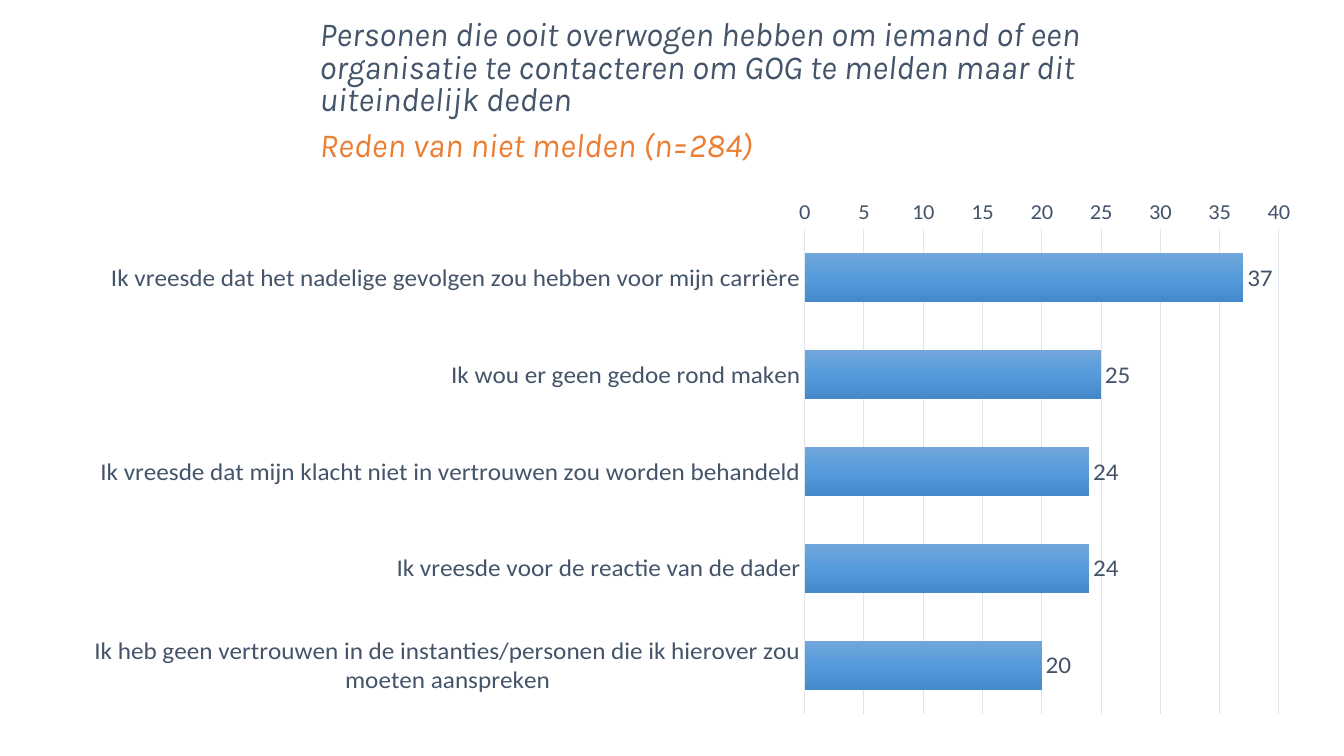
from pptx import Presentation
from pptx.chart.data import CategoryChartData
from pptx.dml.color import RGBColor
from pptx.enum.chart import XL_AXIS_CROSSES as Crosses, XL_CHART_TYPE as ChartType
from pptx.enum.chart import XL_LABEL_POSITION as LabelPosition, XL_TICK_MARK as TickMark
from pptx.enum.text import MSO_ANCHOR as Anchor, MSO_AUTO_SIZE as AutoSize
from pptx.oxml import parse_xml
from pptx.oxml.ns import nsdecls, qn
from pptx.util import Inches, Pt

COLORS = {
    "text": "44546A",
    "accent": "ED7D31",
    "grid": "E0E5EB",
    "bar_top": "71A6DB",
    "bar_middle": "559BDB",
    "bar_bottom": "448ACA",
}

HEADING = [
    ("Personen die ooit overwogen hebben om iemand of een organisatie te "
     "contacteren om GOG te melden maar dit uiteindelijk deden", "text"),
    ("Reden van niet melden (n=284)", "accent"),
]

REASONS = {
    "Ik vreesde dat het nadelige gevolgen zou hebben voor mijn carrière": 37,
    "Ik wou er geen gedoe rond maken": 25,
    "Ik vreesde dat mijn klacht niet in vertrouwen zou worden behandeld": 24,
    "Ik vreesde voor de reactie van de dader": 24,
    "Ik heb geen vertrouwen in de instanties/personen die ik hierover zou "
    "moeten aanspreken": 20,
}


def rgb(name):
    return RGBColor.from_string(COLORS[name])


def format_font(font, size, color="text", name="Calibri", italic=False):
    font.size = Pt(size)
    font.name = name
    font.italic = italic
    font.color.rgb = rgb(color)


def add_text(para, text, **style):
    span = para.add_run()
    span.text = text
    format_font(span.font, **style)


class ReasonsSlide:
    def __init__(self, deck):
        self.page = deck.slides.add_slide(deck.slide_layouts[1])
        title = self.page.shapes.title
        title.element.getparent().remove(title.element)

    def add_heading(self, left, top, width, height, lines):
        box = self.page.placeholders[1]
        box.left, box.top = Inches(left), Inches(top)
        box.width, box.height = Inches(width), Inches(height)
        frame = box.text_frame
        frame.word_wrap = True
        frame.auto_size = AutoSize.NONE
        frame.vertical_anchor = Anchor.BOTTOM
        for index, (text, color) in enumerate(lines):
            para = frame.paragraphs[0] if index == 0 else frame.add_paragraph()
            # No bullet and no hanging indent
            properties = para._p.get_or_add_pPr()
            properties.set("marL", "0")
            properties.set("indent", "0")
            properties.append(parse_xml(f'<a:buNone {nsdecls("a")}/>'))
            para.line_spacing = 0.8
            para.space_before = Pt(10 if index else 0)
            add_text(para, text, size=24, color=color, name="Karla", italic=True)

    def add_bar_chart(self, left, top, width, height, values):
        data = CategoryChartData(number_format="0")
        data.categories = list(values)
        data.add_series("Series 1", list(values.values()))
        chart = self.page.shapes.add_chart(
            ChartType.BAR_CLUSTERED, Inches(left), Inches(top),
            Inches(width), Inches(height), data).chart
        format_font(chart.font, size=13)
        chart.has_title = False
        chart.has_legend = False
        self.format_axes(chart)
        self.format_bars(chart.plots[0])
        self.place_plot(chart, x=0.569, y=0.002, w=0.379, h=0.922)

    def format_axes(self, chart):
        for axis, size in ((chart.category_axis, 18), (chart.value_axis, 16)):
            axis.major_tick_mark = axis.minor_tick_mark = TickMark.NONE
            format_font(axis.tick_labels.font, size=size)
        # First reason on top, scale along the bottom
        reasons, scale = chart.category_axis, chart.value_axis
        reasons.reverse_order = True
        reasons.crosses = Crosses.MAXIMUM
        scale.minimum_scale, scale.maximum_scale, scale.major_unit = 0, 40, 5
        scale.tick_labels.number_format = "0"
        scale.tick_labels.number_format_is_linked = False
        scale.has_major_gridlines = True
        scale.format.line.fill.background()
        for line in (reasons.format.line, scale.major_gridlines.format.line):
            line.color.rgb = rgb("grid")
            line.width = Pt(0.75)

    def format_bars(self, plot):
        plot.gap_width = 100
        plot.vary_by_categories = False
        series = plot.series[0]
        series.invert_if_negative = False
        # Three-stop gradient running from top to bottom
        stops = "".join(
            f'<a:gs pos="{pos * 1000}"><a:srgbClr val="{COLORS[name]}"/></a:gs>'
            for pos, name in ((0, "bar_top"), (50, "bar_middle"), (100, "bar_bottom")))
        series._element.get_or_add_spPr().append(parse_xml(
            f'<a:gradFill {nsdecls("a")} rotWithShape="1"><a:gsLst>{stops}</a:gsLst>'
            '<a:lin ang="5400000" scaled="0"/></a:gradFill>'))
        labels = series.data_labels
        labels.show_value = True
        labels.position = LabelPosition.OUTSIDE_END
        labels.number_format = "0"
        labels.number_format_is_linked = False
        format_font(labels.font, size=18)

    def place_plot(self, chart, **fractions):
        area = chart._chartSpace.chart.plotArea
        for layout in area.findall(qn("c:layout")):
            area.remove(layout)
        modes = "".join(f'<c:{side}Mode val="edge"/>' for side in "xy")
        sizes = "".join(f'<c:{side} val="{part}"/>' for side, part in fractions.items())
        area.insert(0, parse_xml(
            f'<c:layout {nsdecls("c")}><c:manualLayout><c:layoutTarget val="inner"/>'
            f'{modes}{sizes}</c:manualLayout></c:layout>'))


def main():
    deck = Presentation()
    deck.slide_width, deck.slide_height = Inches(13.33), Inches(7.5)
    slide = ReasonsSlide(deck)
    slide.add_bar_chart(0.92, 1.98, 12.41, 5.5, REASONS)
    slide.add_heading(3.07, 0.12, 9.08, 1.56, HEADING)
    deck.save("out.pptx")


if __name__ == "__main__":
    main()
